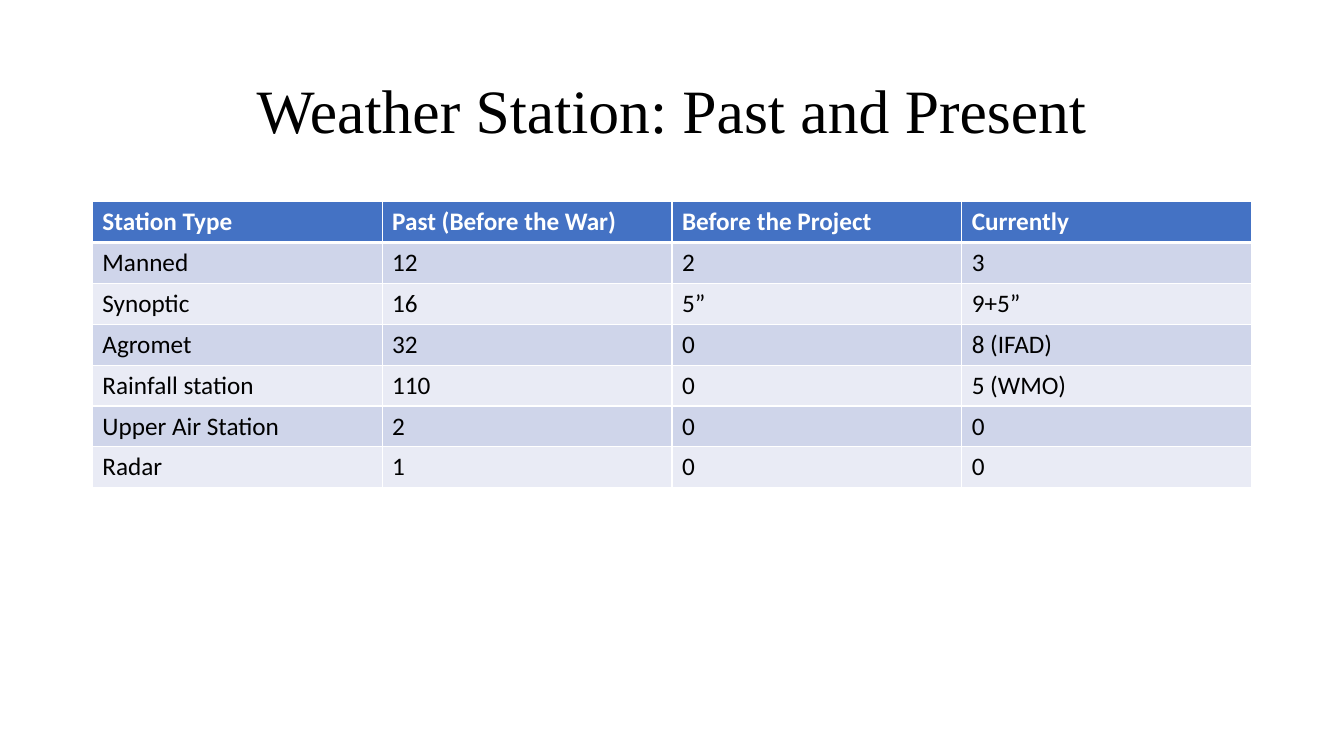
from dataclasses import dataclass

from lxml.etree import SubElement
from pptx import Presentation
from pptx.dml.color import RGBColor
from pptx.enum.text import MSO_ANCHOR, PP_ALIGN
from pptx.oxml.ns import qn
from pptx.util import Pt


@dataclass(frozen=True)
class Theme:
    title_font: str = "Times New Roman"
    body_font: str = "Calibri"
    title_size: int = 44
    body_size: int = 18
    text: str = "000000"
    header_text: str = "FFFFFF"
    header_fill: str = "4472C4"
    band_fills: tuple = ("CFD5EA", "E9EBF5")
    border: str = "FFFFFF"
    thin_border: int = 1
    header_border: int = 3


@dataclass(frozen=True)
class Box:
    left: float
    top: float
    width: float
    height: float


THEME = Theme()
TITLE_BOX = Box(66, 28.75, 828, 104.4)
TABLE_BOX = Box(66, 144, 828, 204.4)
STATIONS = [
    ("Station Type", "Past (Before the War)", "Before the Project", "Currently"),
    ("Manned", "12", "2", "3"),
    ("Synoptic", "16", "5”", "9+5”"),
    ("Agromet", "32", "0", "8 (IFAD)"),
    ("Rainfall station", "110", "0", "5 (WMO)"),
    ("Upper Air Station", "2", "0", "0"),
    ("Radar", "1", "0", "0"),
]


def format_text(para, font_name, size, color, bold=False):
    for span in para.runs:
        span.font.name = font_name
        span.font.size = Pt(size)
        span.font.bold = bold
        span.font.color.rgb = RGBColor.from_string(color)


def add_title(page, box, text):
    title = page.shapes.title
    title.left, title.top = Pt(box.left), Pt(box.top)
    title.width, title.height = Pt(box.width), Pt(box.height)
    frame = title.text_frame
    frame.text = text
    frame.word_wrap = True
    frame.vertical_anchor = MSO_ANCHOR.MIDDLE
    para = frame.paragraphs[0]
    para.alignment = PP_ALIGN.CENTER
    para.line_spacing = 0.9
    format_text(para, THEME.title_font, THEME.title_size, THEME.text)


def set_borders(cell, top_width, bottom_width):
    properties = cell._tc.get_or_add_tcPr()
    thin = THEME.thin_border
    widths = {"a:lnL": thin, "a:lnR": thin, "a:lnT": top_width, "a:lnB": bottom_width}
    for tag, width in widths.items():
        line = SubElement(properties, qn(tag), w=str(Pt(width)))
        fill = SubElement(line, qn("a:solidFill"))
        SubElement(fill, qn("a:srgbClr"), val=THEME.border)


def style_cell(cell, row_index):
    is_header = row_index == 0
    thin, thick = THEME.thin_border, THEME.header_border
    set_borders(cell, thick if row_index == 1 else thin, thick if is_header else thin)
    fill_color = THEME.header_fill if is_header else THEME.band_fills[(row_index - 1) % 2]
    text_color = THEME.header_text if is_header else THEME.text
    cell.fill.solid()
    cell.fill.fore_color.rgb = RGBColor.from_string(fill_color)
    para = cell.text_frame.paragraphs[0]
    format_text(para, THEME.body_font, THEME.body_size, text_color, is_header)


def add_station_table(page, box, rows):
    table = page.shapes.add_table(
        len(rows), len(rows[0]),
        Pt(box.left), Pt(box.top), Pt(box.width), Pt(box.height),
    ).table
    for column in table.columns:
        column.width = Pt(box.width / len(rows[0]))
    for row_index, values in enumerate(rows):
        table.rows[row_index].height = Pt(box.height / len(rows))
        for column_index, value in enumerate(values):
            cell = table.cell(row_index, column_index)
            cell.text_frame.text = value
            style_cell(cell, row_index)


def main():
    deck = Presentation()
    deck.slide_width, deck.slide_height = Pt(960), Pt(540)
    page = deck.slides.add_slide(deck.slide_layouts[5])
    add_title(page, TITLE_BOX, "Weather Station: Past and Present")
    add_station_table(page, TABLE_BOX, STATIONS)
    deck.save("out.pptx")


if __name__ == "__main__":
    main()
